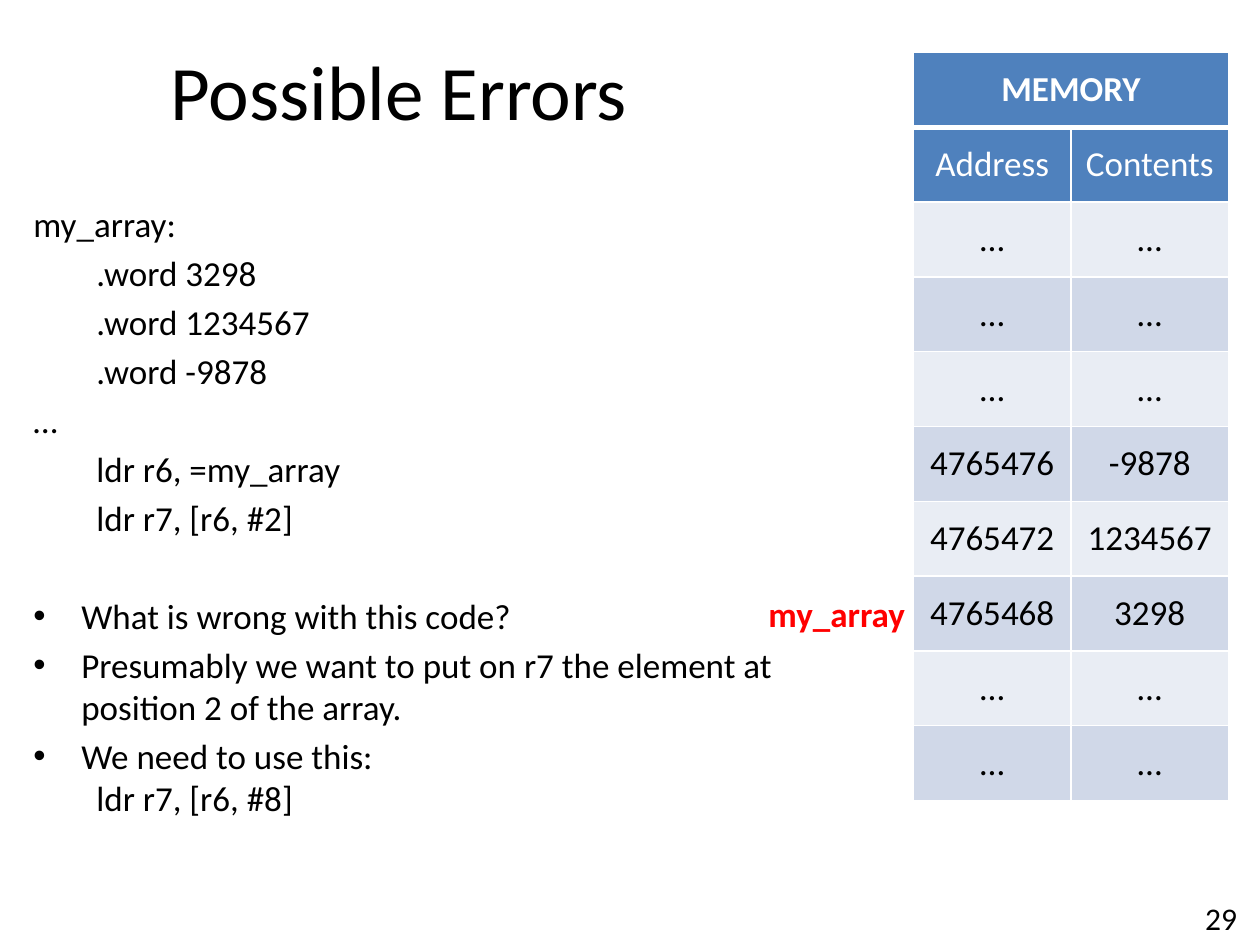
from lxml.etree import SubElement as Sub
from pptx import Presentation
from pptx.dml.color import RGBColor as Rgb
from pptx.enum.text import MSO_ANCHOR as Anchor, MSO_AUTO_SIZE as Auto, PP_ALIGN as Align
from pptx.oxml.ns import qn
from pptx.util import Inches, Pt

HUES = {"ink": "000000", "paper": "FFFFFF", "head": "4F81BD",
        "light": "E9EDF4", "dark": "D0D8E8", "mark": "FF0000"}
COLS, ROWS = 120, 90  # grid over the whole slide


class Deck:
    font = "Calibri"
    size = 20

    def __init__(self, wide, high):
        self.prs = Presentation()
        self.prs.slide_width, self.prs.slide_height = Inches(wide), Inches(high)
        self.page = self.prs.slides.add_slide(self.prs.slide_layouts[5])

    def box(self, col, row, cols, rows):
        x, y = self.prs.slide_width / COLS, self.prs.slide_height / ROWS
        return [round(n) for n in (col * x, row * y, cols * x, rows * y)]

    def run(self, para, text, hue="ink", size=None, bold=False):
        run = para.add_run()
        run.text = text
        font = run.font
        font.name, font.size, font.bold = self.font, Pt(size or self.size), bold
        font.color.rgb = Rgb.from_string(HUES[hue])

    def title(self, text, *area):
        shape = self.page.shapes.title
        shape.left, shape.top, shape.width, shape.height = self.box(*area)
        frame = shape.text_frame
        frame.vertical_anchor = Anchor.MIDDLE
        para = frame.paragraphs[0]
        para.alignment = Align.CENTER
        self.run(para, text, size=44)

    def text(self, *area, wrap=True):
        frame = self.page.shapes.add_textbox(*self.box(*area)).text_frame
        frame.word_wrap = wrap
        return frame

    def label(self, text, *area, wrap=True, align=Align.LEFT, **look):
        frame = self.text(*area, wrap=wrap)
        if not wrap:
            frame.auto_size = Auto.SHAPE_TO_FIT_TEXT
        para = frame.paragraphs[0]
        para.alignment = align
        self.run(para, text, **look)

    def bullet(self, para):
        props = para._p.get_or_add_pPr()
        props.set("marL", str(Inches(0.38)))
        props.set("indent", str(-Inches(0.38)))
        Sub(props, qn("a:buFont"), typeface="Arial")
        Sub(props, qn("a:buChar"), char="•")

    def body(self, code, notes, *area):
        frame = self.text(*area)
        frame.margin_top = Inches(0.27)
        for i, text in enumerate(code + notes):
            para = frame.paragraphs[0] if i == 0 else frame.add_paragraph()
            # The notes stand one line below the code
            gap = 0 if i == 0 else 32.4 if i == len(code) else 4
            para.space_before = Pt(gap)
            if i >= len(code):
                self.bullet(para)
            for j, line in enumerate(text.split("\n")):
                if j:
                    para.add_line_break()
                self.run(para, line)

    def edge(self, cell, base=1):
        props = cell._tc.get_or_add_tcPr()
        for i, side in enumerate(("lnL", "lnR", "lnT", "lnB")):
            line = props.makeelement(qn("a:" + side), {"w": str(Pt(base if side == "lnB" else 1))})
            fill = Sub(line, qn("a:solidFill"))
            Sub(fill, qn("a:srgbClr"), val=HUES["paper"])
            props.insert(i, line)

    def cell(self, cell, text, fill, hue="ink", bold=False):
        cell.fill.solid()
        cell.fill.fore_color.rgb = Rgb.from_string(HUES[fill])
        cell.vertical_anchor = Anchor.MIDDLE
        if text:
            para = cell.text_frame.paragraphs[0]
            para.alignment = Align.CENTER
            self.run(para, text, hue, bold=bold)
        self.edge(cell, 3 if bold else 1)

    def table(self, head, rows, *area):
        grid = self.page.shapes.add_table(len(rows) + 1, 2, *self.box(*area)).table
        grid.cell(0, 0).merge(grid.cell(0, 1))
        for r, row in enumerate([(head, "")] + rows):
            fill = "head" if r < 2 else ("light", "dark")[r % 2]
            hue = "paper" if r < 2 else "ink"
            for c, text in enumerate(row):
                self.cell(grid.cell(r, c), text, fill, hue, bold=r == 0)


def main():
    deck = Deck(10, 7.5)
    deck.title("Possible Errors", 6, 1, 64, 15)

    # Code and remarks
    code = ["my_array:", "\t.word 3298", "\t.word 1234567", "\t.word -9878", "…",
            "\tldr r6, =my_array", "\tldr r7, [r6, #2]"]
    notes = ["What is wrong with this code?",
             "Presumably we want to put on r7 the element at position 2 of the array.",
             "We need to use this:\n\tldr r7, [r6, #8]"]
    deck.body(code, notes, 2, 16, 74, 66)

    # Slide number
    deck.label("29", 91, 85, 28, 4.8, align=Align.RIGHT, size=18)

    # Memory table, with the array's start marked
    blank = ("…", "…")
    rows = [("Address", "Contents"), *[blank] * 3, ("4765476", "-9878"),
            ("4765472", "1234567"), ("4765468", "3298"), *[blank] * 2]
    deck.table("MEMORY", rows, 87, 5, 30, 71.25)
    deck.label("my_array", 72, 55.8, 15.6, 5.25, wrap=False, hue="mark", bold=True)

    deck.prs.save("out.pptx")


if __name__ == "__main__":
    main()
